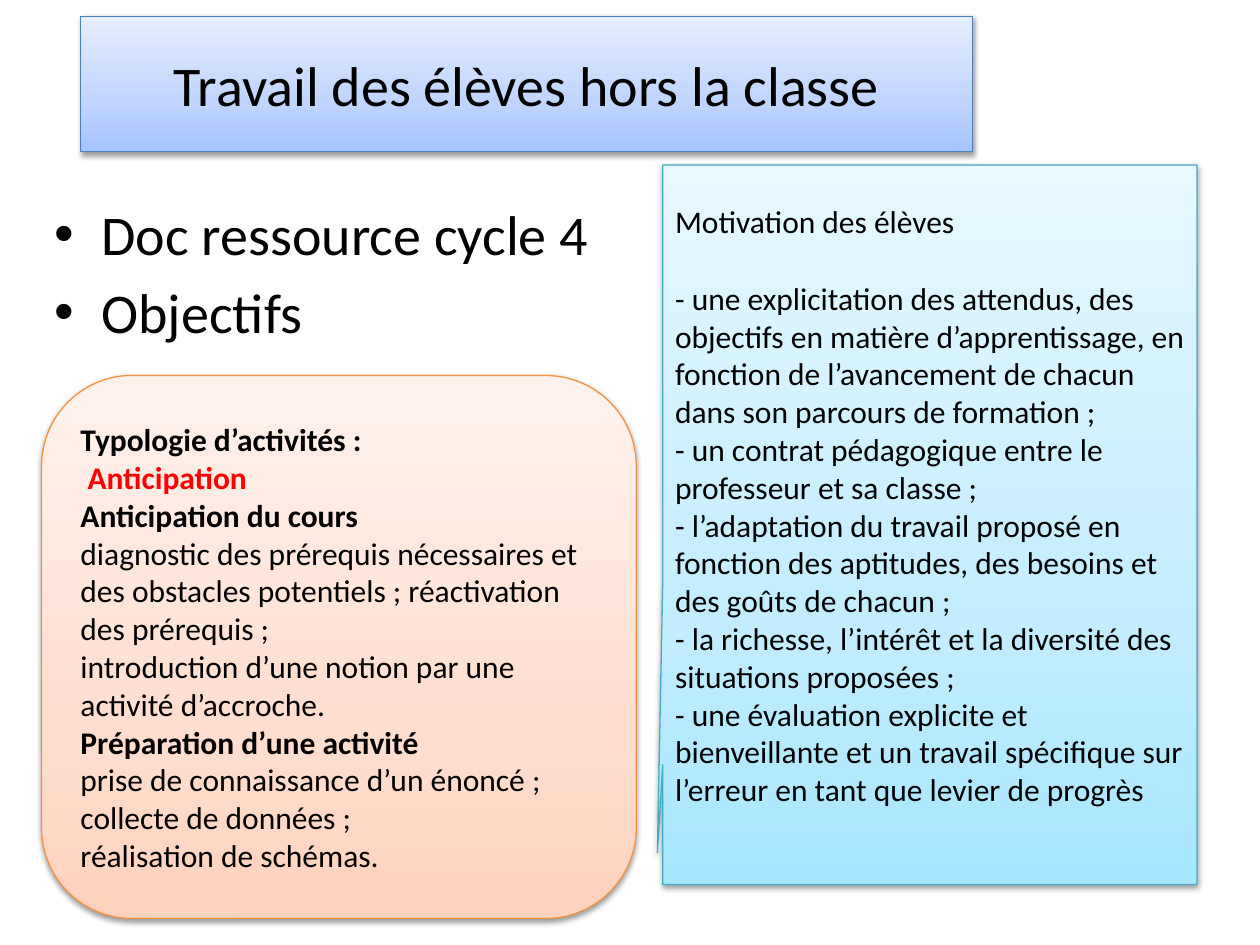
from copy import deepcopy

from lxml import etree
from pptx import Presentation
from pptx import util as u
from pptx.dml.color import RGBColor
from pptx.enum import shapes, text
from pptx.oxml.ns import qn

TYPOLOGY = [
    ("Typologie d’activités :", True, "000000"),
    (" Anticipation", True, "FF0000"),
    ("Anticipation du cours", True, "000000"),
    ("diagnostic des prérequis nécessaires et des obstacles potentiels ; "
     "réactivation des prérequis ;", False, "000000"),
    ("introduction d’une notion par une activité d’accroche.", False, "000000"),
    ("Préparation d’une activité", True, "000000"),
    ("prise de connaissance d’un énoncé ;", False, "000000"),
    ("collecte de données ;", False, "000000"),
    ("réalisation de schémas.", False, "000000"),
]
MOTIVATION = [
    "Motivation des élèves",
    "- une explicitation des attendus, des objectifs en matière d’apprentissage, "
    "en fonction de l’avancement de chacun dans son parcours de formation ;",
    "- un contrat pédagogique entre le professeur et sa classe ;",
    "- l’adaptation du travail proposé en fonction des aptitudes, des besoins "
    "et des goûts de chacun ;",
    "- la richesse, l’intérêt et la diversité des situations proposées ;",
    "- une évaluation explicite et bienveillante et un travail spécifique "
    "sur l’erreur en tant que levier de progrès",
]


def color(value):
    return RGBColor.from_string(value)


def place(shape, box):
    shape.left, shape.top, shape.width, shape.height = map(u.Inches, box)


def add_shadow(shape):
    shape.shadow.inherit = False
    effects = shape._element.spPr.find(qn("a:effectLst"))
    shadow = etree.SubElement(effects, qn("a:outerShdw"), blurRad="40000",
                              dist="20000", dir="5400000", rotWithShape="0")
    black = etree.SubElement(shadow, qn("a:srgbClr"), val="000000")
    etree.SubElement(black, qn("a:alpha"), val="38000")


def style_panel(shape, stops, line):
    shape.fill.gradient()
    shape.fill.gradient_angle = 90
    stop_list = shape._element.spPr.find(".//" + qn("a:gsLst"))
    stop_list.insert(1, deepcopy(stop_list[0]))
    for stop, position, value in zip(shape.fill.gradient_stops, (0, 0.35, 1), stops):
        stop.position = position
        stop.color.rgb = color(value)
    shape.line.color.rgb = color(line)
    shape.line.width = u.Pt(0.75)
    add_shadow(shape)


def format_para(para, size, bold=False, value="000000"):
    for span in para.runs:
        span.font.name = "Calibri"
        span.font.size = u.Pt(size)
        span.font.bold = bold
        span.font.color.rgb = color(value)


def fill_panel(shape, items):
    frame = shape.text_frame
    frame.word_wrap = True
    frame.vertical_anchor = text.MSO_ANCHOR.MIDDLE
    frame.text = "\n".join(item[0] for item in items)
    for para, (_, bold, value) in zip(frame.paragraphs, items):
        para.alignment = text.PP_ALIGN.LEFT
        format_para(para, 18, bold, value)


def add_title(page, box):
    title = page.shapes.title
    place(title, box)
    style_panel(title, ("A4C4FF", "BFD4FF", "E6EEFF"), "4B7EBC")
    title.text_frame.text = "Travail des élèves hors la classe"
    format_para(title.text_frame.paragraphs[0], 32)


def add_topics(page, box):
    body = page.placeholders[1]
    place(body, box)
    body.text_frame.text = "Doc ressource cycle 4\nObjectifs"
    for para in body.text_frame.paragraphs:
        format_para(para, 32)


def add_typology(page, box):
    panel = page.shapes.add_shape(shapes.MSO_SHAPE.ROUNDED_RECTANGLE,
                                  *map(u.Inches, box))
    style_panel(panel, ("FFD2BD", "FFDED0", "FFF2ED"), "F69240")
    fill_panel(panel, TYPOLOGY)


def add_motivation(page, box):
    callout = page.shapes.add_shape(shapes.MSO_SHAPE.RECTANGULAR_CALLOUT,
                                    *map(u.Inches, box))
    callout.adjustments[0] = -0.51
    callout.adjustments[1] = 0.456
    style_panel(callout, ("A7E6FF", "C1EDFF", "E7F8FF"), "46AAC5")
    fill_panel(callout, [(line, False, "000000") for line in MOTIVATION])
    callout.text_frame.paragraphs[0].space_after = u.Pt(22)
    callout.text_frame.margin_bottom = u.Inches(0.36)


def main():
    deck = Presentation()
    deck.slide_width, deck.slide_height = u.Inches(10), u.Inches(7.5)
    page = deck.slides.add_slide(deck.slide_layouts[1])
    add_title(page, (0.64, 0.13, 7.08, 1.07))
    add_topics(page, (0.33, 1.53, 8.62, 4.76))
    add_typology(page, (0.33, 2.98, 4.72, 4.31))
    add_motivation(page, (5.26, 1.31, 4.24, 5.71))
    deck.save("out.pptx")


if __name__ == "__main__":
    main()
